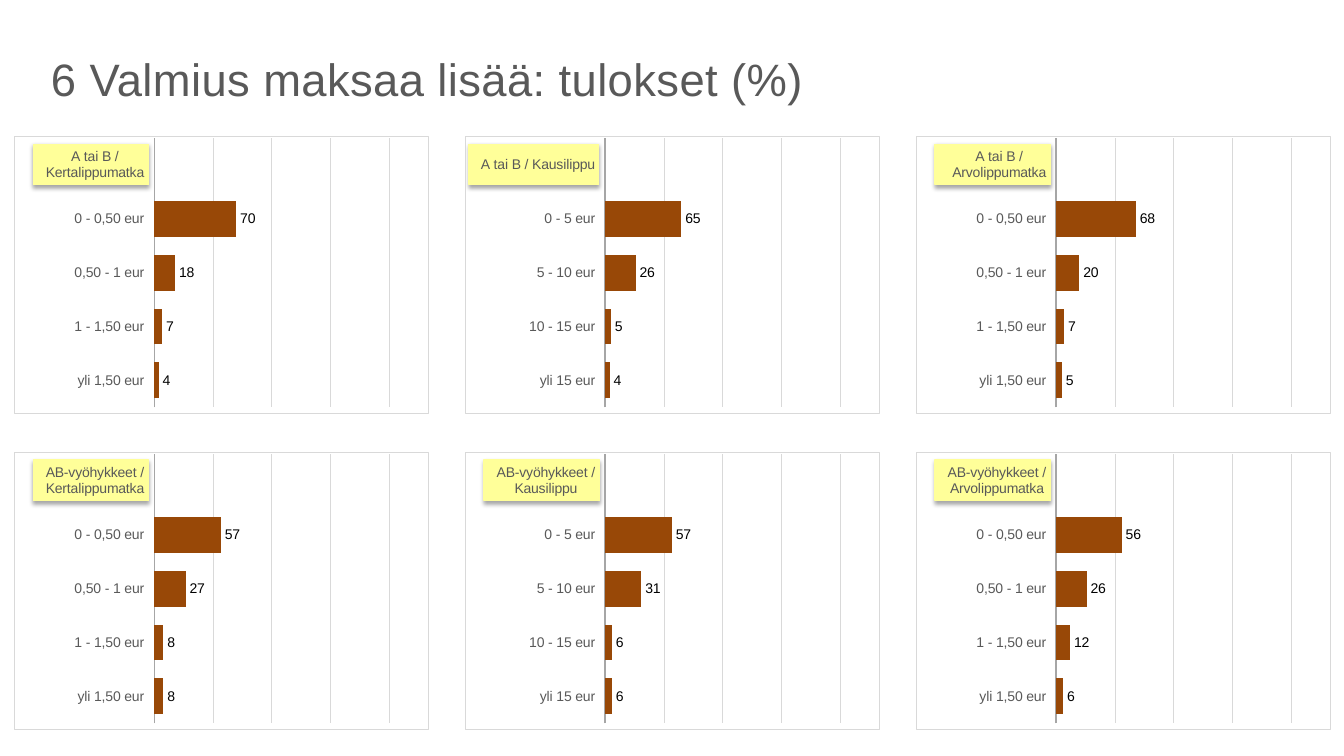
"""Build a slide with six bar charts on the willingness to pay more for tickets."""
from lxml import etree
from pptx import Presentation
from pptx.chart.data import CategoryChartData
from pptx.dml.color import RGBColor
from pptx.enum.chart import XL_CHART_TYPE, XL_LABEL_POSITION, XL_TICK_LABEL_POSITION, XL_TICK_MARK
from pptx.enum.shapes import MSO_SHAPE
from pptx.enum.text import MSO_ANCHOR
from pptx.oxml import parse_xml
from pptx.util import Pt

BAR_CLUSTERED = XL_CHART_TYPE.BAR_CLUSTERED
OUTSIDE_END = XL_LABEL_POSITION.OUTSIDE_END
NO_TICK = XL_TICK_MARK.NONE
LABELS_LOW = XL_TICK_LABEL_POSITION.LOW
RECTANGLE = MSO_SHAPE.RECTANGLE
TOP = MSO_ANCHOR.TOP

BLACK = RGBColor(0x00, 0x00, 0x00)
GREY = RGBColor(0x59, 0x59, 0x59)
AXIS_GREY = RGBColor(0xA6, 0xA6, 0xA6)
GRID_GREY = RGBColor(0xD9, 0xD9, 0xD9)
YELLOW = RGBColor(0xFF, 0xFF, 0x99)
BROWN = RGBColor(0x98, 0x48, 0x07)

NAMESPACES = (
    'xmlns:a="http://schemas.openxmlformats.org/drawingml/2006/main" '
    'xmlns:c="http://schemas.openxmlformats.org/drawingml/2006/chart"'
)
SHADOW = (
    f'<a:outerShdw {NAMESPACES} blurRad="39370" dist="22860" dir="5400000" rotWithShape="0">'
    '<a:srgbClr val="000000"><a:alpha val="35000"/></a:srgbClr></a:outerShdw>'
)
PLOT_LAYOUT = (
    f'<c:layout {NAMESPACES}><c:manualLayout><c:layoutTarget val="inner"/>'
    '<c:xMode val="edge"/><c:yMode val="edge"/><c:x val="0.337"/><c:y val="0.006"/>'
    '<c:w val="0.568"/><c:h val="0.972"/></c:manualLayout></c:layout>'
)
PLOT_FORMAT = f'<c:spPr {NAMESPACES}><a:noFill/><a:ln><a:noFill/></a:ln></c:spPr>'
CHART_FORMAT = (
    f'<c:spPr {NAMESPACES}><a:noFill/><a:ln w="9525"><a:solidFill>'
    f'<a:srgbClr val="{GRID_GREY}"/></a:solidFill></a:ln></c:spPr>'
)

SINGLE_PRICES = ["0 - 0,50 eur", "0,50 - 1 eur", "1 - 1,50 eur", "yli 1,50 eur"]
SEASON_PRICES = ["0 - 5 eur", "5 - 10 eur", "10 - 15 eur", "yli 15 eur"]
TICKETS = [("Kertalippumatka", SINGLE_PRICES), ("Kausilippu", SEASON_PRICES),
           ("Arvolippumatka", SINGLE_PRICES)]
ZONES = [
    ("A tai B", [(70, 18, 7, 4), (65, 26, 5, 4), (68, 20, 7, 5)]),
    ("AB-vyöhykkeet", [(57, 27, 8, 8), (57, 31, 6, 6), (56, 26, 12, 6)]),
]
WIDE_LABEL = "A tai B / Kausilippu"


def px(*lengths):
    return [round(length * 914400 / 100.8) for length in lengths]


def set_font(font, size, color):
    for name, value in {"name": "Arial", "size": Pt(size), "bold": False}.items():
        setattr(font, name, value)
    font.color.rgb = color


presentation = Presentation()
presentation.slide_width, presentation.slide_height = px(1344, 756)
slide = presentation.slides.add_slide(presentation.slide_layouts[6])

title = slide.shapes.add_textbox(*px(41, 36, 1082, 55))
frame = title.text_frame
for name, value in {"word_wrap": True, "vertical_anchor": TOP, "margin_top": px(10)[0]}.items():
    setattr(frame, name, value)
paragraph = frame.paragraphs[0]
paragraph.line_spacing = 1.1
run = paragraph.add_run()
run.text = "6 Valmius maksaa lisää: tulokset (%)"
set_font(run.font, 32.4, GREY)
run.font._element.set("spc", "30")

for row, (zone, results) in enumerate(ZONES):
    for column, ((ticket, prices), values) in enumerate(zip(TICKETS, results)):
        heading = f"{zone} / {ticket}"
        left, top = 14 + 451 * column, 136 + 316 * row
        label_left, label_width = (4, 130) if heading == WIDE_LABEL else (19, 116)

        label = slide.shapes.add_shape(RECTANGLE, *px(left + label_left, top + 8, label_width, 41))
        label.shadow.inherit = False
        label.fill.solid()
        label.fill.fore_color.rgb = YELLOW
        label.line.color.rgb = YELLOW
        label.line.width = Pt(0.75)
        label._element.spPr.find("{*}effectLst").append(etree.fromstring(SHADOW))

        data = CategoryChartData()
        data.categories = [heading] + prices
        data.add_series("Series 1", (None,) + values)
        chart = slide.shapes.add_chart(BAR_CLUSTERED, *px(left, top, 415, 278), data).chart
        chart.has_legend = False
        chart.has_title = False
        set_font(chart.font, 18, BLACK)

        chart_space = chart._chartSpace
        chart_space.find("{*}txPr").addprevious(parse_xml(CHART_FORMAT))
        plot_area = chart_space.chart.plotArea
        for layout in plot_area.findall("{*}layout"):
            plot_area.remove(layout)
        plot_area.insert(0, parse_xml(PLOT_LAYOUT))
        plot_area.append(parse_xml(PLOT_FORMAT))

        category_axis = chart.category_axis
        for name, value in {"reverse_order": True, "major_tick_mark": NO_TICK,
                            "minor_tick_mark": NO_TICK,
                            "tick_label_position": LABELS_LOW}.items():
            setattr(category_axis, name, value)
        set_font(category_axis.tick_labels.font, 10, GREY)
        category_axis.format.line.color.rgb = AXIS_GREY
        category_axis.format.line.width = Pt(0.75)

        value_axis = chart.value_axis
        for name, value in {"visible": False, "minimum_scale": 0, "maximum_scale": 200,
                            "major_unit": 50, "has_major_gridlines": True}.items():
            setattr(value_axis, name, value)
        value_axis.major_gridlines.format.line.color.rgb = GRID_GREY
        value_axis.major_gridlines.format.line.width = Pt(0.25)

        plot = chart.plots[0]
        plot.gap_width = 50
        plot.vary_by_categories = False
        bars = plot.series[0]
        bars.format.fill.solid()
        bars.format.fill.fore_color.rgb = BROWN
        bars.data_labels.show_value = True
        bars.data_labels.position = OUTSIDE_END
        set_font(bars.data_labels.font, 10, BLACK)

presentation.save("out.pptx")
